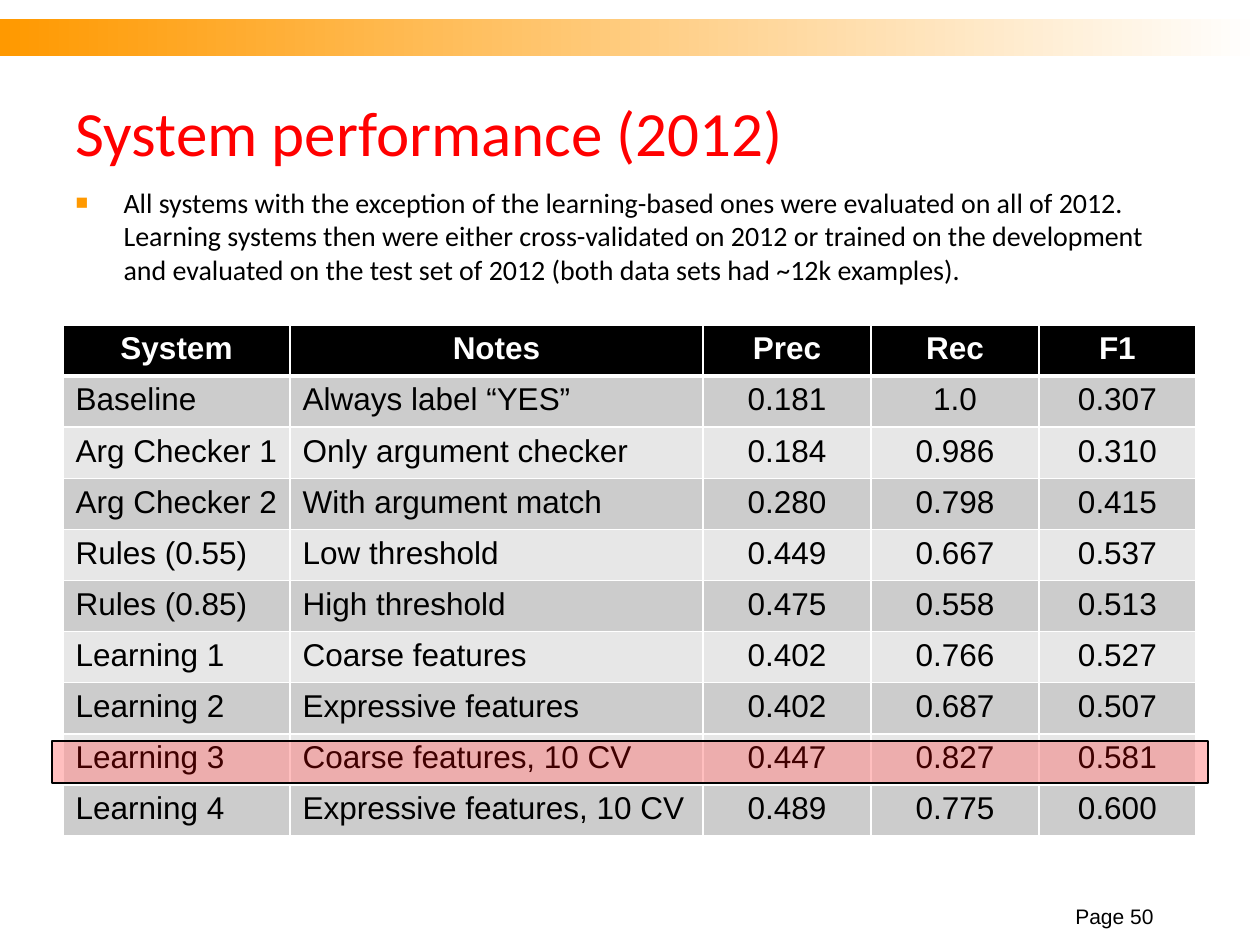
from lxml import etree
from pptx import Presentation
from pptx.dml.color import RGBColor
from pptx.enum.shapes import MSO_SHAPE
from pptx.enum.text import MSO_ANCHOR, MSO_AUTO_SIZE, PP_ALIGN
from pptx.oxml.ns import qn
from pptx.util import Pt

RECTANGLE = MSO_SHAPE.RECTANGLE
TOP, MIDDLE, BOTTOM = MSO_ANCHOR.TOP, MSO_ANCHOR.MIDDLE, MSO_ANCHOR.BOTTOM
LEFT, CENTER, RIGHT = PP_ALIGN.LEFT, PP_ALIGN.CENTER, PP_ALIGN.RIGHT
NO_AUTOFIT = MSO_AUTO_SIZE.NONE

EMU_PER_PX = 914400 / 126
EMU_PER_POINT = 12700
ORANGE, RED, BLACK, WHITE = "FF9900", "FF0000", "000000", "FFFFFF"
DARK_ROW, LIGHT_ROW = "CCCCCC", "E7E7E7"

SUMMARY = (
    "All systems with the exception of the learning-based ones were evaluated on all of 2012. "
    "Learning systems then were either cross-validated on 2012 or trained on the development "
    "and evaluated on the test set of 2012 (both data sets had ~12k examples)."
)
COLUMN_WIDTHS = [227, 413, 168, 168, 157]
RESULTS = [
    ("System", "Notes", "Prec", "Rec", "F1"),
    ("Baseline", "Always label “YES”", "0.181", "1.0", "0.307"),
    ("Arg Checker 1", "Only argument checker", "0.184", "0.986", "0.310"),
    ("Arg Checker 2", "With argument match", "0.280", "0.798", "0.415"),
    ("Rules (0.55)", "Low threshold", "0.449", "0.667", "0.537"),
    ("Rules (0.85)", "High threshold", "0.475", "0.558", "0.513"),
    ("Learning 1", "Coarse features", "0.402", "0.766", "0.527"),
    ("Learning 2", "Expressive features", "0.402", "0.687", "0.507"),
    ("Learning 3", "Coarse features, 10 CV", "0.447", "0.827", "0.581"),
    ("Learning 4", "Expressive features, 10 CV", "0.489", "0.775", "0.600"),
]


def px(length):
    return round(length * EMU_PER_PX)


def color(value):
    return RGBColor.from_string(value)


def add_xml(parent, tag, **attributes):
    return etree.SubElement(parent, qn(tag), attributes)


def place(shape, box):
    shape.left, shape.top, shape.width, shape.height = map(px, box)


def write(frame, text, size, font, hue, align=LEFT, bold=False):
    frame.text = text
    para = frame.paragraphs[0]
    para.alignment = align
    for span in para.runs:
        span.font.size = Pt(size)
        span.font.name = font
        span.font.bold = bold
        span.font.color.rgb = color(hue)
    return para


def add_rectangle(page, box):
    shape = page.shapes.add_shape(RECTANGLE, *map(px, box))
    shape.shadow.inherit = False
    return shape


def add_banner(page, box):
    banner = add_rectangle(page, box)
    banner.line.fill.background()
    banner.fill.gradient()
    banner.fill.gradient_angle = 0
    for stop, hue, position in zip(banner.fill.gradient_stops, (ORANGE, WHITE), (0, 1)):
        stop.color.rgb = color(hue)
        stop.position = position


def fill_title(page, box):
    title = page.shapes.title
    place(title, box)
    title.text_frame.auto_size = NO_AUTOFIT
    title.text_frame.vertical_anchor = MIDDLE
    write(title.text_frame, "System performance (2012)", 36, "Calibri", RED)


def fill_summary(page, box):
    body = page.placeholders[1]
    place(body, box)
    frame = body.text_frame
    frame.auto_size = NO_AUTOFIT
    frame.vertical_anchor = TOP
    para = write(frame, SUMMARY, 16, "Calibri", BLACK)
    para.space_before = Pt(0)
    properties = para._p.get_or_add_pPr()
    properties.set("marL", str(px(48)))
    properties.set("indent", str(px(-48)))
    add_xml(add_xml(properties, "a:buClr"), "a:srgbClr", val=ORANGE)
    add_xml(properties, "a:buSzPct", val="75000")
    add_xml(properties, "a:buFont", typeface="Arial")
    add_xml(properties, "a:buChar", char="■")


def add_borders(cell, top, bottom):
    """Draw white cell borders; top and bottom are widths in points."""
    properties = cell._tc.get_or_add_tcPr()
    for side, width in (("L", 1), ("R", 1), ("T", top), ("B", bottom)):
        line = add_xml(properties, f"a:ln{side}", w=str(width * EMU_PER_POINT))
        add_xml(add_xml(line, "a:solidFill"), "a:srgbClr", val=WHITE)


def add_results(page, box):
    frame = page.shapes.add_table(len(RESULTS), len(COLUMN_WIDTHS), *map(px, box))
    table = frame.table
    for column, width in zip(table.columns, COLUMN_WIDTHS):
        column.width = px(width)
    for row_index, values in enumerate(RESULTS):
        header = row_index == 0
        row_fill = BLACK if header else DARK_ROW if row_index % 2 else LIGHT_ROW
        for column_index, value in enumerate(values):
            cell = table.cell(row_index, column_index)
            add_borders(cell, 3 if row_index == 1 else 1, 3 if header else 1)
            cell.fill.solid()
            cell.fill.fore_color.rgb = color(row_fill)
            align = CENTER if header or column_index > 1 else LEFT
            write(cell.text_frame, value, 18, "Arial", WHITE if header else BLACK, align, header)


def add_page_number(page, box):
    frame = page.shapes.add_textbox(*map(px, box)).text_frame
    frame.word_wrap = True
    frame.vertical_anchor = BOTTOM
    write(frame, "Page 50", 12, "Arial", BLACK, RIGHT)


def add_highlight(page, box):
    highlight = add_rectangle(page, box)
    highlight.fill.solid()
    highlight.fill.fore_color.rgb = color(RED)
    add_xml(highlight._element.spPr.find(".//" + qn("a:srgbClr")), "a:alpha", val="25000")
    highlight.line.color.rgb = color(BLACK)
    highlight.line.width = Pt(0.75)


def main():
    deck = Presentation()
    deck.slide_width, deck.slide_height = px(1260), px(945)
    page = deck.slides.add_slide(deck.slide_layouts[1])
    add_banner(page, (0, 19, 1260, 37))
    fill_title(page, (63, 63, 1134, 136))
    fill_summary(page, (63, 179, 1134, 116))
    add_results(page, (63, 325, 1133, 511))
    add_page_number(page, (1040, 903, 126, 32))
    add_highlight(page, (52, 741, 1156, 42))
    deck.save("out.pptx")


if __name__ == "__main__":
    main()
